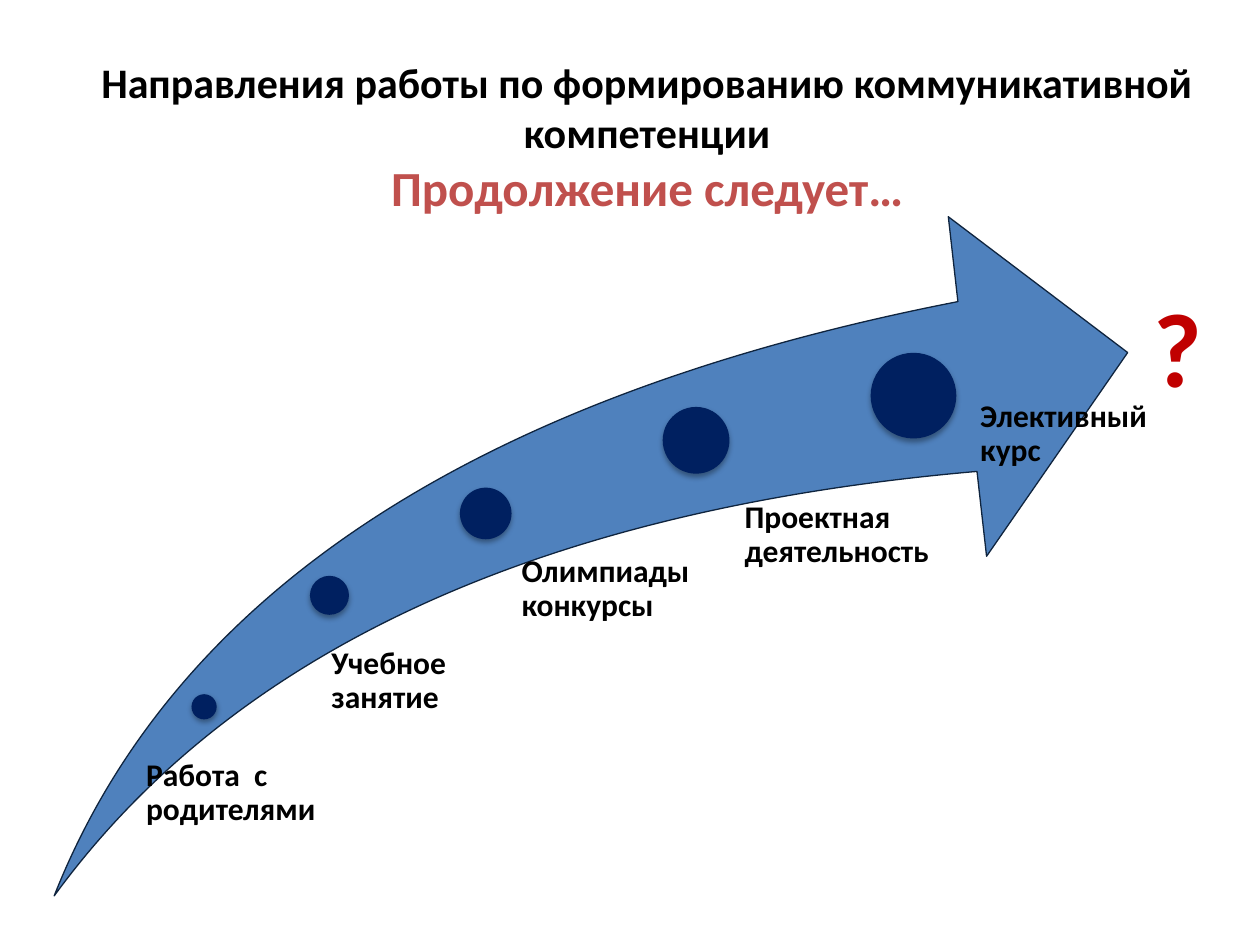
from dataclasses import dataclass

from lxml.etree import SubElement
from pptx import Presentation
from pptx.dml.color import RGBColor
from pptx.enum.shapes import MSO_SHAPE
from pptx.enum.text import MSO_ANCHOR, PP_ALIGN
from pptx.oxml.ns import qn
from pptx.util import Inches, Pt

BLACK = RGBColor(0x00, 0x00, 0x00)
CORAL = RGBColor(0xC0, 0x50, 0x4D)
RED = RGBColor(0xC0, 0x00, 0x00)
ARROW_BLUE = RGBColor(0x4F, 0x81, 0xBD)
ARROW_EDGE = RGBColor(0x0F, 0x24, 0x3E)
NAVY = RGBColor(0x00, 0x20, 0x60)


@dataclass(frozen=True)
class Area:
    left: float
    top: float
    width: float
    height: float

    def lengths(self) -> tuple:
        return tuple(Inches(v) for v in (self.left, self.top, self.width, self.height))


@dataclass(frozen=True)
class Milestone:
    dot_left: float
    dot_top: float
    diameter: float
    label_area: Area
    label_inset: float
    lines: tuple[str, ...]


MILESTONES = (
    Milestone(1.52, 5.51, 0.2, Area(1.05, 6.03, 1.62, 0.87), 0.11, ("Работа  с родителями",)),
    Milestone(2.46, 4.57, 0.31, Area(2.47, 5.14, 1.71, 1.87), 0.16, ("Учебное", "занятие")),
    Milestone(3.65, 3.87, 0.41, Area(3.92, 4.41, 1.66, 0.76), 0.22, ("Олимпиады", "конкурсы")),
    Milestone(5.26, 3.23, 0.53, Area(5.63, 3.98, 1.94, 0.61), 0.28, ("Проектная", "деятельность")),
    Milestone(6.91, 2.8, 0.68, Area(7.42, 3.18, 1.73, 0.69), 0.36, ("Элективный курс",)),
)


def add_box(slide, area: Area, **frame_format):
    """Add a wrapping text box and return its text frame."""
    frame = slide.shapes.add_textbox(*area.lengths()).text_frame
    for name, value in {"word_wrap": True, **frame_format}.items():
        setattr(frame, name, value)
    return frame


def add_span(para, text: str, size: float, color: RGBColor) -> None:
    span = para.add_run()
    span.text = text
    for name, value in {"name": "Calibri", "size": Pt(size), "bold": True}.items():
        setattr(span.font, name, value)
    span.font.color.rgb = color


def add_soft_shadow(shape) -> None:
    """Cast a faint black shadow straight down."""
    shape.shadow.inherit = False
    effects = shape._element.spPr.find(qn("a:effectLst"))
    shadow = SubElement(effects, qn("a:outerShdw"), blurRad=str(Pt(3.1)),
                        dist=str(Pt(1.8)), dir="5400000", rotWithShape="0")
    color = SubElement(shadow, qn("a:srgbClr"), val="000000")
    SubElement(color, qn("a:alpha"), val="35000")


def add_title(slide) -> None:
    frame = add_box(slide, Area(0.27, 0.3, 9.73, 1.56), vertical_anchor=MSO_ANCHOR.MIDDLE)
    para = frame.paragraphs[0]
    para.alignment = PP_ALIGN.CENTER
    add_span(para, "Направления работы по формированию коммуникативной компетенции", 24, BLACK)
    para.add_line_break()
    add_span(para, "Продолжение следует…", 28, CORAL)


def add_growth_arrow(slide) -> None:
    area = Area(0.43, 1.72, 8.52, 5.39)
    arrow = slide.shapes.add_shape(MSO_SHAPE.SWOOSH_ARROW, *area.lengths())
    for index in range(2):
        arrow.adjustments[index] = 0.25
    arrow.shadow.inherit = False
    arrow.fill.solid()
    arrow.fill.fore_color.rgb = ARROW_BLUE
    arrow.line.color.rgb = ARROW_EDGE
    arrow.line.width = Pt(0.75)


def add_milestone(slide, milestone: Milestone) -> None:
    area = Area(milestone.dot_left, milestone.dot_top, milestone.diameter, milestone.diameter)
    dot = slide.shapes.add_shape(MSO_SHAPE.OVAL, *area.lengths())
    dot.fill.solid()
    dot.fill.fore_color.rgb = NAVY
    dot.line.fill.background()
    add_soft_shadow(dot)

    frame = add_box(slide, milestone.label_area, margin_left=Inches(milestone.label_inset),
                    margin_top=0, margin_right=0, margin_bottom=0)
    for index, line in enumerate(milestone.lines):
        para = frame.add_paragraph() if index else frame.paragraphs[0]
        para.line_spacing = 0.9
        add_span(para, line, 18, BLACK)


def main() -> None:
    deck = Presentation()
    deck.slide_width, deck.slide_height = Inches(10), Inches(7.5)
    slide = deck.slides.add_slide(deck.slide_layouts[6])

    add_title(slide)
    add_growth_arrow(slide)
    for milestone in MILESTONES:
        add_milestone(slide, milestone)
    question = add_box(slide, Area(9.06, 2.19, 0.78, 1.11))
    add_span(question.paragraphs[0], "?", 60, RED)

    deck.save("out.pptx")


if __name__ == "__main__":
    main()
